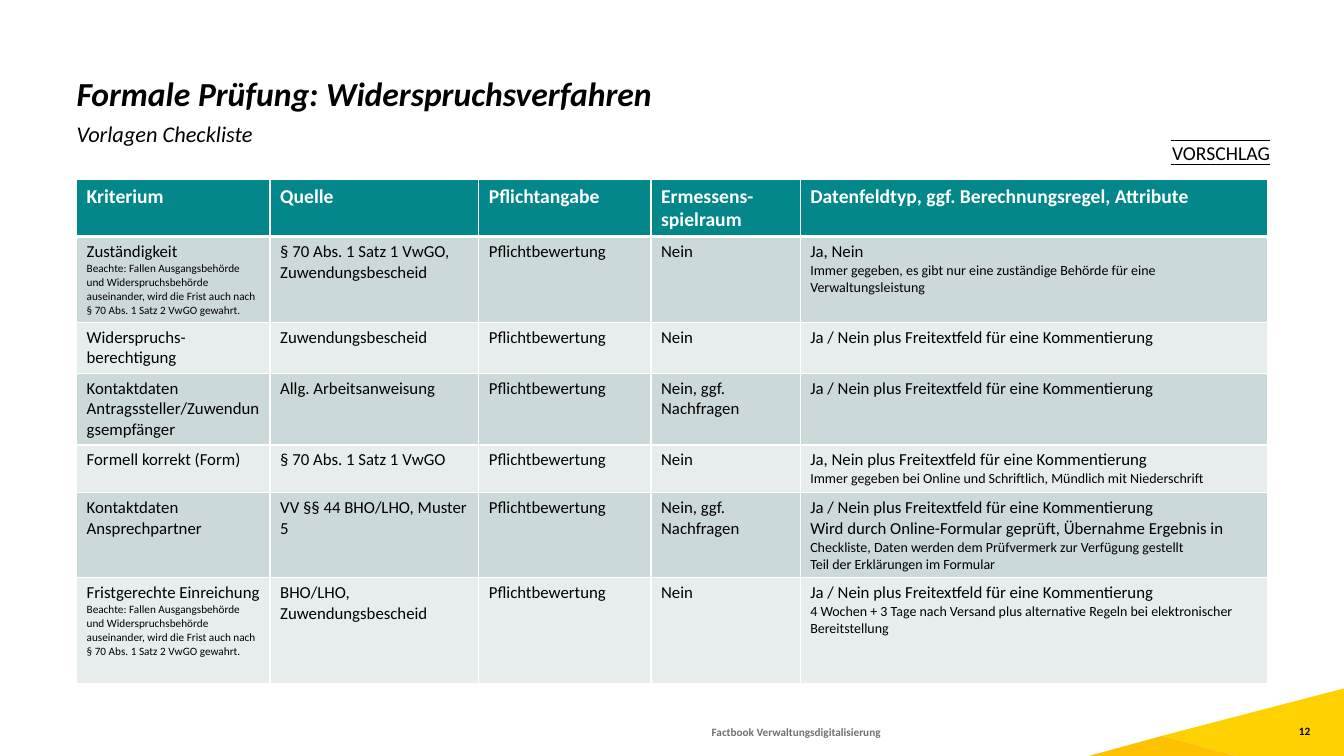
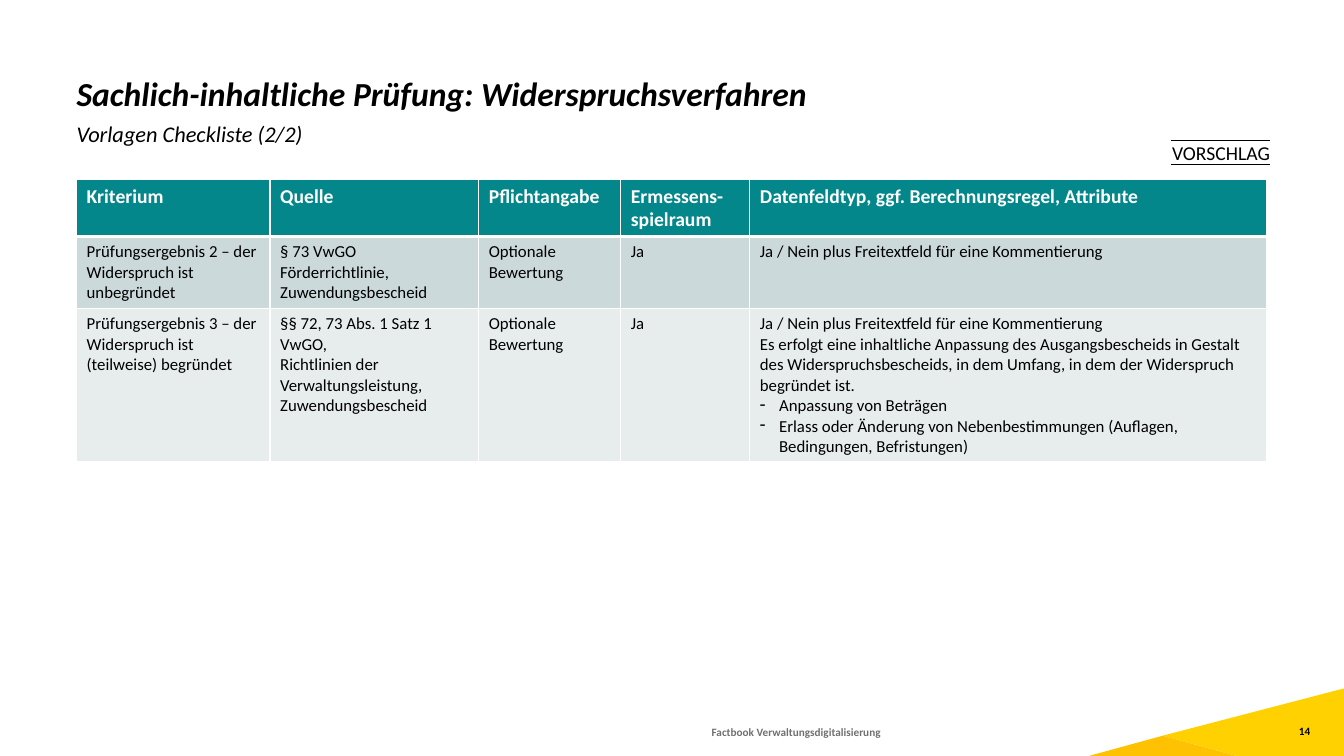
from collections import namedtuple

from lxml import etree
from pptx import Presentation
from pptx.dml.color import RGBColor
from pptx.enum.shapes import MSO_CONNECTOR
from pptx.enum.text import MSO_ANCHOR, PP_ALIGN
from pptx.oxml.ns import qn
from pptx.util import Emu, Inches, Pt

LEFT, RIGHT = PP_ALIGN.LEFT, PP_ALIGN.RIGHT
TOP, MIDDLE, BOTTOM = MSO_ANCHOR.TOP, MSO_ANCHOR.MIDDLE, MSO_ANCHOR.BOTTOM
STRAIGHT = MSO_CONNECTOR.STRAIGHT

GRID_COLUMNS, GRID_ROWS = 160, 90
GRID_STEP = Inches(7.5) / GRID_ROWS

Box = namedtuple("Box", "left top width height")

THEME = {
    "colors": {
        "black": "000000",
        "white": "FFFFFF",
        "gray": "707070",
        "yellow": "FFD100",
        "amber": "FFC203",
        "header": "03878A",
        "bands": ("CCD9DA", "E7EDED"),
    },
    "font": "Calibri",
    "text": {
        "title": {"size": 24, "color": "black", "bold": True, "italic": True},
        "subtitle": {"size": 16, "color": "black", "italic": True},
        "tag": {"size": 14, "color": "black"},
        "footer": {"size": 8, "color": "gray", "bold": True},
        "number": {"size": 8, "color": "black", "bold": True},
        "header": {"size": 14, "color": "white", "bold": True},
        "cell": {"size": 12, "color": "black", "bold": False},
        "bullet": {"size": 12, "color": "black", "bold": False},
        "small": {"size": 10, "color": "black", "bold": False},
        "note": {"size": 8, "color": "black", "bold": False},
    },
    "thin_border": 1,
    "header_border": 3,
    "tag_line": 0.5,
    "bullet_indent": 0.19,
}

TITLE_BOX = Box(9.12, 4.08, 141.8, 9.48)
SUBTITLE_BOX = Box(9.12, 14.28, 141.8, 3.24)
TAG_BOX = Box(139.44, 16.68, 11.76, 2.88)
TABLE_CORNER = (9.12, 21.36)
FOOTER_BOX = Box(84.72, 85.8, 52.68, 2.16)
NUMBER_BOX = Box(153.36, 86.28, 2.64, 1.56)
CORNER_BOX = Box(129.6, 81.96, 30.4, 8.04)

CORNER_OUTLINES = {
    "yellow": ((0.29, 0.7), (0.58, 1), (1, 1), (1, 0)),
    "amber": ((0, 1), (0.58, 1), (0.29, 0.7)),
}

FOOTER = "Factbook Verwaltungsdigitalisierung"
TAG = "VORSCHLAG"
HEADER = ("Kriterium", "Quelle", "Pflichtangabe", "Ermessens-spielraum",
          "Datenfeldtyp, ggf. Berechnungsregel, Attribute")
REQUIRED = "Pflichtbewertung"
OPTIONAL = "Optionale Bewertung"
ASK = "Nein, ggf. Nachfragen"
YES_NO_COMMENT = "Ja / Nein plus Freitextfeld für eine Kommentierung"
DEADLINE_NOTE = [("Beachte: Fallen Ausgangsbehörde und Widerspruchsbehörde auseinander, "
                  "wird die Frist auch nach § 70 Abs. 1 Satz 2 VwGO gewahrt.", "note")]


def small(text):
    return [(text, "small")]


def bullet(text):
    return [(text, "bullet")]


CHECKLISTS = (
    {
        "title": "Formale Prüfung: Widerspruchsverfahren",
        "subtitle": "Vorlagen Checkliste",
        "number": "12",
        "columns": (23.04, 24.84, 20.52, 17.76, 55.68),
        "heights": (6.8, 10.2, 6.1, 8.5, 5.7, 10.1, 12.6),
        "rows": (
            (("Zuständigkeit", DEADLINE_NOTE),
             "§ 70 Abs. 1 Satz 1 VwGO, Zuwendungsbescheid", REQUIRED, "Nein",
             ("Ja, Nein", small("Immer gegeben, es gibt nur eine zuständige Behörde "
                                "für eine Verwaltungsleistung"))),
            ("Widerspruchs-berechtigung", "Zuwendungsbescheid", REQUIRED, "Nein",
             YES_NO_COMMENT),
            ("Kontaktdaten Antragssteller/Zuwendungsempfänger",
             "Allg. Arbeitsanweisung", REQUIRED, ASK, YES_NO_COMMENT),
            ("Formell korrekt (Form)", "§ 70 Abs. 1 Satz 1 VwGO", REQUIRED, "Nein",
             ("Ja, Nein plus Freitextfeld für eine Kommentierung",
              small("Immer gegeben bei Online und Schriftlich, "
                    "Mündlich mit Niederschrift"))),
            ("Kontaktdaten Ansprechpartner", "VV §§ 44 BHO/LHO, Muster 5", REQUIRED, ASK,
             (YES_NO_COMMENT,
              [("Wird durch Online-Formular geprüft, Übernahme Ergebnis in ", "cell"),
               ("Checkliste, Daten werden dem Prüfvermerk zur Verfügung gestellt", "small")],
              small("Teil der Erklärungen im Formular"))),
            (("Fristgerechte Einreichung", DEADLINE_NOTE),
             "BHO/LHO, Zuwendungsbescheid", REQUIRED, "Nein",
             (YES_NO_COMMENT,
              small("4 Wochen + 3 Tage nach Versand plus alternative Regeln bei "
                    "elektronischer Bereitstellung"))),
        ),
    },
    {
        "title": "Sachlich-inhaltliche Prüfung: Widerspruchsverfahren",
        "subtitle": "Vorlagen Checkliste (2/2)",
        "number": "14",
        "columns": (23.04, 24.84, 16.92, 15.36, 61.56),
        "heights": (6.8, 8.6, 18.2),
        "rows": (
            ("Prüfungsergebnis 2 – der Widerspruch ist unbegründet",
             ("§ 73 VwGO", "Förderrichtlinie, Zuwendungsbescheid"),
             OPTIONAL, "Ja", YES_NO_COMMENT),
            ("Prüfungsergebnis 3 – der Widerspruch ist (teilweise) begründet",
             ("§§ 72, 73 Abs. 1 Satz 1 VwGO,",
              "Richtlinien der Verwaltungsleistung, Zuwendungsbescheid"),
             OPTIONAL, "Ja",
             (YES_NO_COMMENT,
              "Es erfolgt eine inhaltliche Anpassung des Ausgangsbescheids in Gestalt des "
              "Widerspruchsbescheids, in dem Umfang, in dem der Widerspruch begründet ist.",
              bullet("Anpassung von Beträgen"),
              bullet("Erlass oder Änderung von Nebenbestimmungen (Auflagen, Bedingungen, "
                     "Befristungen)"))),
        ),
    },
)


def grid(steps):
    return Emu(round(steps * GRID_STEP))


def color(name):
    return RGBColor.from_string(THEME["colors"].get(name, name))


def set_all(target, values):
    for name, value in values.items():
        setattr(target, name, value)


def add_run(paragraph, text, style):
    run = paragraph.add_run()
    run.text = text
    values = dict(THEME["text"][style])
    run.font.color.rgb = color(values.pop("color"))
    values["size"] = Pt(values["size"])
    set_all(run.font, {"name": THEME["font"], **values})


def add_text(slide, box, text, style, anchor=TOP, align=LEFT, wrap=True, **spacing):
    shape = slide.shapes.add_textbox(*map(grid, box))
    frame = shape.text_frame
    set_all(frame, {"word_wrap": wrap, "vertical_anchor": anchor, "margin_left": 0,
                    "margin_right": 0, "margin_top": 0, "margin_bottom": 0})
    paragraph = frame.paragraphs[0]
    set_all(paragraph, {"alignment": align, **spacing})
    add_run(paragraph, text, style)


def add_corner(slide, box):
    for fill, outline in CORNER_OUTLINES.items():
        points = [(grid(box.left + x * box.width), grid(box.top + y * box.height))
                  for x, y in outline]
        builder = slide.shapes.build_freeform(*points[0], scale=1)
        builder.add_line_segments(points[1:], close=True)
        shape = builder.convert_to_shape()
        shape.shadow.inherit = False
        shape.fill.solid()
        shape.fill.fore_color.rgb = color(fill)
        shape.line.fill.background()


def add_tag(slide, box):
    add_text(slide, box, TAG, "tag", MIDDLE, RIGHT, wrap=False)
    for edge in (box.top, box.top + box.height):
        line = slide.shapes.add_connector(
            STRAIGHT, grid(box.left), grid(edge), grid(box.left + box.width), grid(edge))
        line.line.color.rgb = color("black")
        line.line.width = Pt(THEME["tag_line"])
        etree.SubElement(line._element.spPr, qn("a:effectLst"))


def add_bullet(paragraph):
    properties = paragraph._p.get_or_add_pPr()
    indent = Inches(THEME["bullet_indent"])
    properties.set("marL", str(indent))
    properties.set("indent", str(-indent))
    etree.SubElement(properties, qn("a:buChar")).set("char", "-")


def set_borders(cell, row):
    thin, thick = THEME["thin_border"], THEME["header_border"]
    widths = {"lnL": thin, "lnR": thin,
              "lnT": thick if row == 1 else thin,
              "lnB": thick if row == 0 else thin}
    properties = cell._tc.get_or_add_tcPr()
    for side, width in widths.items():
        border = etree.SubElement(properties, qn(f"a:{side}"))
        border.set("w", str(Pt(width)))
        fill = etree.SubElement(border, qn("a:solidFill"))
        etree.SubElement(fill, qn("a:srgbClr")).set("val", THEME["colors"]["white"])


def fill_cell(cell, content, row):
    set_borders(cell, row)
    bands = THEME["colors"]["bands"]
    cell.fill.solid()
    cell.fill.fore_color.rgb = color(bands[(row - 1) % len(bands)] if row else "header")
    lines = (content,) if isinstance(content, str) else content
    for index, line in enumerate(lines):
        frame = cell.text_frame
        paragraph = frame.add_paragraph() if index else frame.paragraphs[0]
        runs = [(line, "cell" if row else "header")] if isinstance(line, str) else line
        if runs[0][1] == "bullet":
            add_bullet(paragraph)
        for text, style in runs:
            add_run(paragraph, text, style)


def add_checklist_table(slide, corner, checklist):
    rows = (HEADER, *checklist["rows"])
    columns, heights = checklist["columns"], checklist["heights"]
    box = Box(*corner, sum(columns), sum(heights))
    table = slide.shapes.add_table(len(rows), len(columns), *map(grid, box)).table
    table.horz_banding = False
    for column, width in zip(table.columns, columns):
        column.width = grid(width)
    for row_index, (row, height) in enumerate(zip(rows, heights)):
        table.rows[row_index].height = grid(height)
        for column_index, content in enumerate(row):
            fill_cell(table.cell(row_index, column_index), content, row_index)


def add_checklist_slide(presentation, checklist):
    slide = presentation.slides.add_slide(presentation.slide_layouts[6])
    add_corner(slide, CORNER_BOX)
    add_text(slide, TITLE_BOX, checklist["title"], "title", BOTTOM, line_spacing=0.9)
    add_text(slide, SUBTITLE_BOX, checklist["subtitle"], "subtitle", space_after=Pt(3))
    add_checklist_table(slide, TABLE_CORNER, checklist)
    add_tag(slide, TAG_BOX)
    add_text(slide, FOOTER_BOX, FOOTER, "footer", BOTTOM)
    add_text(slide, NUMBER_BOX, checklist["number"], "number", MIDDLE, RIGHT)


def main():
    presentation = Presentation()
    presentation.slide_width = grid(GRID_COLUMNS)
    presentation.slide_height = grid(GRID_ROWS)
    for checklist in CHECKLISTS:
        add_checklist_slide(presentation, checklist)
    presentation.save("out.pptx")


if __name__ == "__main__":
    main()
